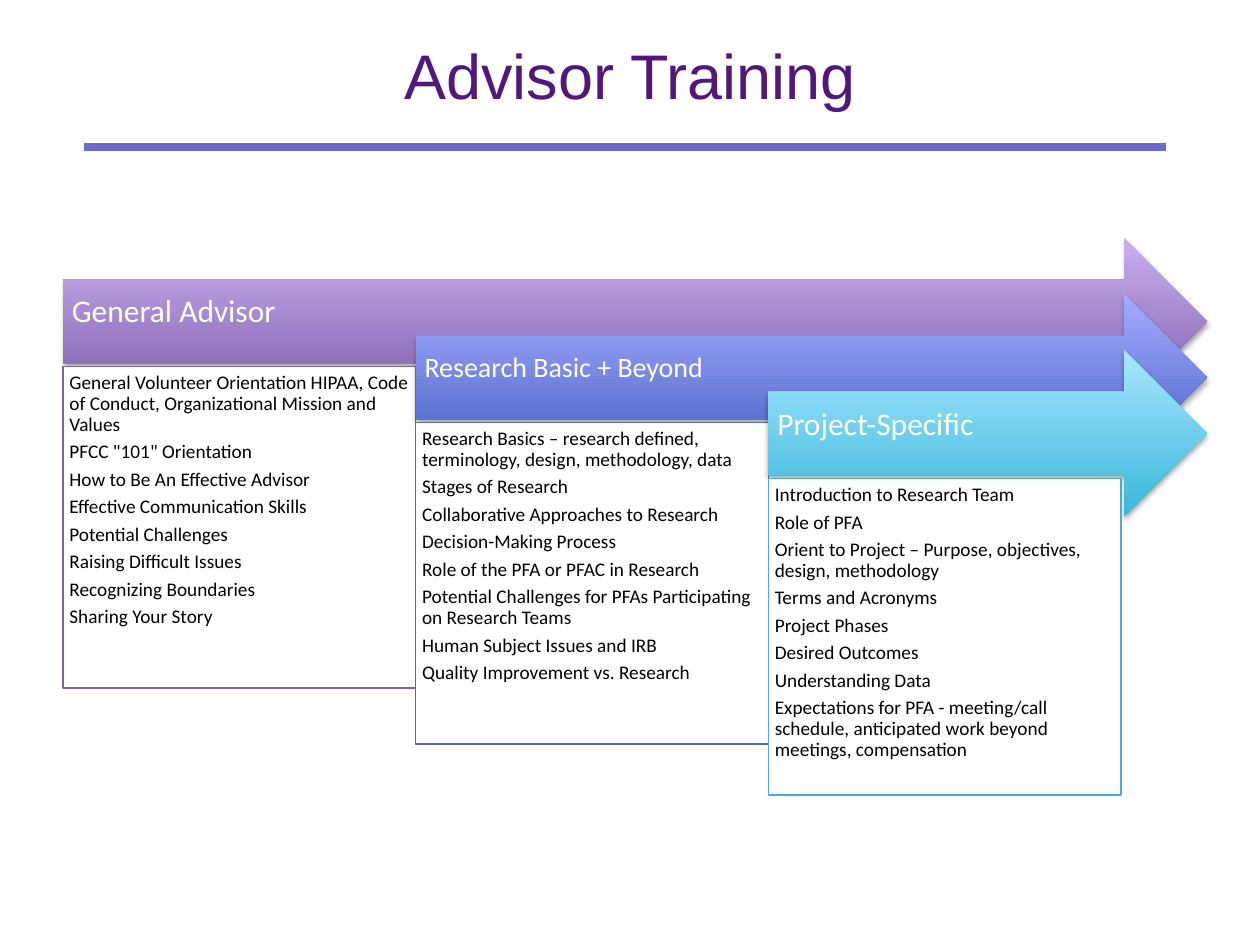
from dataclasses import dataclass

from lxml import etree
from pptx import Presentation
from pptx import util as u
from pptx.dml.color import RGBColor
from pptx.enum import shapes, text
from pptx.oxml.ns import qn

COLORS = {
    "title": "511879", "rule": "6B6BCF", "white": "FFFFFF", "black": "000000",
    "purple": "7F5BAB", "purple_light": "C8B0ED", "purple_line": "8064A2",
    "blue": "495EC2", "blue_light": "A2ADFF", "blue_line": "5767B4",
    "teal": "39B7D8", "teal_light": "A7E6FF", "teal_line": "4BACC6",
}

# All in centimetres
FIRST_LEFT, FIRST_TOP = 1.27, 4.8
STEP_RIGHT, STEP_DOWN = 7.11, 1.13
ARROW_RIGHT, ARROW_HEIGHT = 24.34, 3.36
TOPICS_DROP = 2.59


@dataclass
class Stage:
    name: str
    name_size: int
    color: str
    topics_height: float
    topics: list[str]


STAGES = [
    Stage("General Advisor", 18, "purple", 6.48, [
        "General Volunteer Orientation HIPAA, Code of Conduct, "
        "Organizational Mission and Values",
        'PFCC "101" Orientation',
        "How to Be An Effective Advisor",
        "Effective Communication Skills",
        "Potential Challenges",
        "Raising Difficult Issues",
        "Recognizing Boundaries",
        "Sharing Your Story",
    ]),
    Stage("Research Basic + Beyond", 16, "blue", 6.48, [
        "Research Basics – research defined, terminology, design, methodology, data",
        "Stages of Research",
        "Collaborative Approaches to Research",
        "Decision-Making Process",
        "Role of the PFA or PFAC in Research",
        "Potential Challenges for PFAs Participating on Research Teams",
        "Human Subject Issues and IRB",
        "Quality Improvement vs. Research",
    ]),
    Stage("Project-Specific", 18, "teal", 6.38, [
        "Introduction to Research Team",
        "Role of PFA",
        "Orient to Project – Purpose, objectives, design, methodology",
        "Terms and Acronyms",
        "Project Phases",
        "Desired Outcomes",
        "Understanding Data",
        "Expectations for PFA - meeting/call schedule, anticipated work "
        "beyond meetings, compensation",
    ]),
]


def rgb(name: str) -> RGBColor:
    return RGBColor.from_string(COLORS[name])


def write(shape, lines: list[str], size: int, color: str, font: str = "Calibri",
          spacing: float = 0.9, align=text.PP_ALIGN.LEFT,
          anchor=text.MSO_ANCHOR.TOP, insets=(0.13, 0.13, 0.13, 0.13)) -> None:
    """Fill a shape with one paragraph per line; insets run left, top, right, bottom."""
    frame = shape.text_frame
    frame.word_wrap = True
    frame.vertical_anchor = anchor
    (frame.margin_left, frame.margin_top,
     frame.margin_right, frame.margin_bottom) = map(u.Cm, insets)
    frame.text = "\n".join(lines)
    for para in frame.paragraphs:
        para.alignment = align
        para.line_spacing = spacing
        para.space_after = u.Pt(0.35 * size)
        para.font.name = font
        para.font.size = u.Pt(size)
        para.font.color.rgb = rgb(color)


def add_soft_shadow(shape) -> None:
    shape.shadow.inherit = False
    effects = shape._element.spPr.find(qn("a:effectLst"))
    shadow = etree.SubElement(effects, qn("a:outerShdw"), blurRad=str(u.Pt(3.1)),
                              dist=str(u.Pt(1.8)), dir="5400000", rotWithShape="0")
    tint = etree.SubElement(shadow, qn("a:srgbClr"), val=COLORS["black"])
    etree.SubElement(tint, qn("a:alpha"), val="35000")


def add_arrow(slide, stage: Stage, left: float, top: float) -> None:
    arrow = slide.shapes.add_shape(
        shapes.MSO_SHAPE.RIGHT_ARROW, u.Cm(left), u.Cm(top),
        u.Cm(ARROW_RIGHT - left), u.Cm(ARROW_HEIGHT))
    arrow.fill.gradient()
    arrow.fill.gradient_angle = 90
    for stop, color in zip(arrow.fill.gradient_stops,
                           (stage.color, f"{stage.color}_light")):
        stop.color.rgb = rgb(color)
    arrow.line.fill.background()
    add_soft_shadow(arrow)
    write(arrow, [stage.name], stage.name_size, "white",
          anchor=text.MSO_ANCHOR.MIDDLE, insets=(0.18, 0.18, 0.71, 0.53))


def add_topics(slide, stage: Stage, left: float, top: float) -> None:
    box = slide.shapes.add_shape(
        shapes.MSO_SHAPE.RECTANGLE, u.Cm(left), u.Cm(top),
        u.Cm(STEP_RIGHT), u.Cm(stage.topics_height))
    box.shadow.inherit = False
    box.fill.solid()
    box.fill.fore_color.rgb = rgb("white")
    box.line.color.rgb = rgb(f"{stage.color}_line")
    box.line.width = u.Pt(0.75)
    write(box, stage.topics, 11, "black")


def add_heading(slide) -> None:
    title = slide.shapes.add_textbox(u.Cm(1.27), u.Cm(0.84), u.Cm(22.86), u.Cm(3.18))
    write(title, ["Advisor Training"], 36, "title", font="Arial", spacing=0.85,
          align=text.PP_ALIGN.CENTER, insets=(0.25, 0.13, 0.25, 0.13))
    rule = slide.shapes.add_connector(
        shapes.MSO_CONNECTOR.STRAIGHT, u.Cm(1.7), u.Cm(2.97), u.Cm(23.5), u.Cm(2.97))
    rule.line.color.rgb = rgb("rule")
    rule.line.width = u.Pt(4.5)
    etree.SubElement(rule._element.spPr, qn("a:effectLst"))


def main() -> None:
    deck = Presentation()
    deck.slide_width, deck.slide_height = u.Cm(25.4), u.Cm(19.05)
    slide = deck.slides.add_slide(deck.slide_layouts[6])
    add_heading(slide)
    for index, stage in enumerate(STAGES):
        left = FIRST_LEFT + index * STEP_RIGHT
        top = FIRST_TOP + index * STEP_DOWN
        add_arrow(slide, stage, left, top)
        add_topics(slide, stage, left, top + TOPICS_DROP)
    deck.save("out.pptx")


if __name__ == "__main__":
    main()
